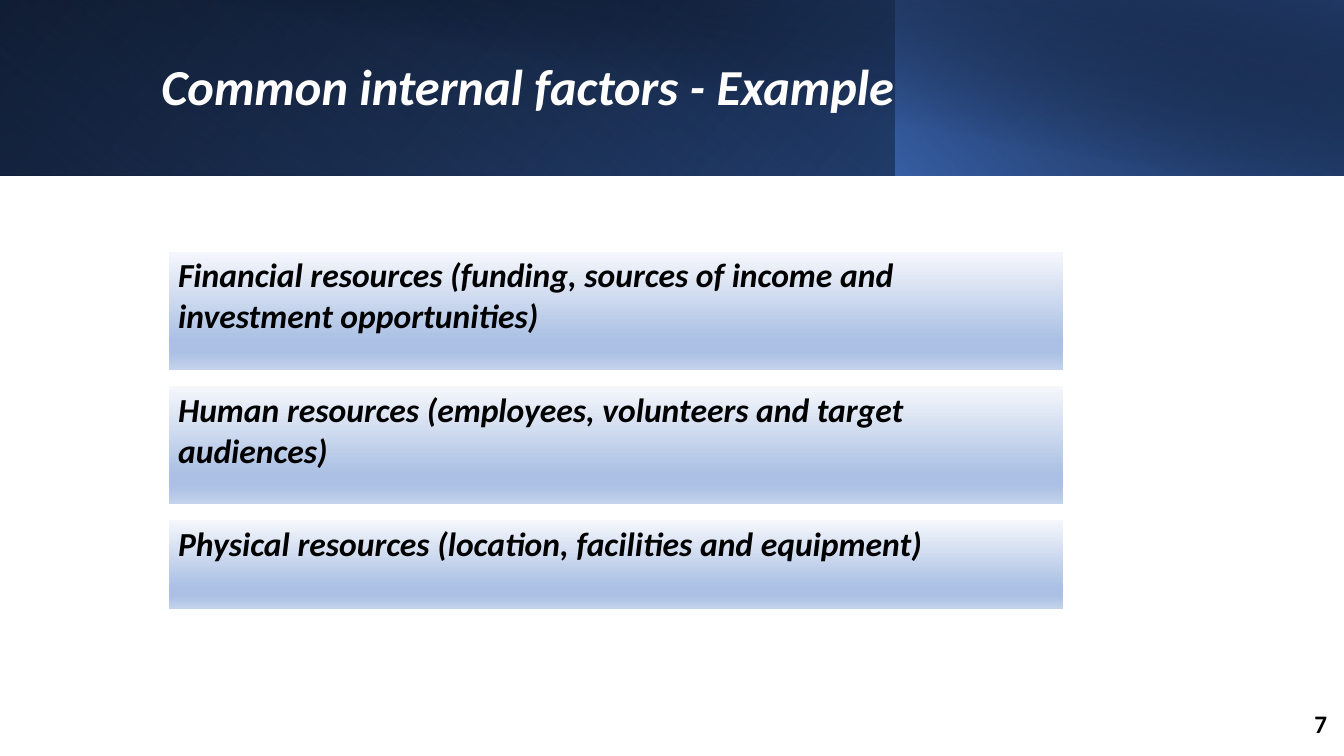
from lxml import etree
from pptx import Presentation
from pptx.dml.color import RGBColor
from pptx.enum.shapes import MSO_SHAPE
from pptx.enum.text import MSO_ANCHOR, PP_ALIGN
from pptx.oxml.ns import nsdecls, qn
from pptx.util import Inches, Pt

RECTANGLE = MSO_SHAPE.RECTANGLE
MIDDLE = MSO_ANCHOR.MIDDLE
LEFT, RIGHT = PP_ALIGN.LEFT, PP_ALIGN.RIGHT

THEME = {
    "font": "Calibri",
    "title_size": 36, "body_size": 24, "number_size": 18,
    "white": "FFFFFF", "black": "000000",
    "blue": "4472C4", "mid_blue": "2F5597", "navy": "203864",
    "row_stops": [(0, "F6F8FC", 100), (74, "ABC0E4", 100),
                  (83, "ABC0E4", 100), (100, "C7D5ED", 100)],
}


def write_text(frame, text, size, color="black", italic=True, align=LEFT):
    paragraph = frame.paragraphs[0]
    paragraph.alignment = align
    run = paragraph.add_run()
    run.text = text
    run.font.name = THEME["font"]
    run.font.size = Pt(THEME[size])
    run.font.bold = True
    run.font.italic = italic
    run.font.color.rgb = RGBColor.from_string(THEME[color])
    return paragraph


def fill_gradient(fill, properties, stops, angle):
    fill.background()
    stop_xml = "".join(
        f'<a:gs pos="{position * 1000}"><a:srgbClr val="{color}">'
        f'<a:alpha val="{opacity * 1000}"/></a:srgbClr></a:gs>'
        for position, color, opacity in stops)
    gradient = etree.fromstring(
        f'<a:gradFill {nsdecls("a")} rotWithShape="1"><a:gsLst>{stop_xml}</a:gsLst>'
        f'<a:lin ang="{angle * 60000}" scaled="0"/></a:gradFill>')
    properties.replace(properties.find(qn("a:noFill")), gradient)


presentation = Presentation()
presentation.slide_width = Inches(13.33)
presentation.slide_height = Inches(7.5)
width, height = presentation.slide_width, presentation.slide_height
slide = presentation.slides.add_slide(presentation.slide_layouts[5])
band_height = Inches(1.74)
two_thirds = width * 2 // 3

header_layers = [
    (0, width, 0, True, 140,
     [(0, THEME["black"], 100), (100, THEME["mid_blue"], 100)]),
    (0, two_thirds, 180, True, 230,
     [(20, THEME["blue"], 0), (100, THEME["navy"], 55)]),
    (two_thirds, width - two_thirds, 0, True, 220,
     [(0, THEME["blue"], 66), (100, THEME["black"], 30)]),
    (Inches(0.5), width - Inches(0.5), 0, False, 280,
     [(50, THEME["black"], 0), (99, THEME["navy"], 52)]),
]
for left, layer_width, rotation, flipped, angle, stops in header_layers:
    layer = slide.shapes.add_shape(RECTANGLE, left, 0, layer_width, band_height)
    layer.shadow.inherit = False
    layer.line.fill.background()
    layer.rotation = rotation
    properties = layer.element.spPr
    if flipped:
        properties.find(qn("a:xfrm")).set("flipH", "1")
    fill_gradient(layer.fill, properties, stops, angle)

title = slide.shapes.title
title.left, title.top = Inches(1.5), Inches(0.32)
title.width, title.height = Inches(10.82), Inches(1.13)
title.text_frame.vertical_anchor = MIDDLE
title.text_frame.word_wrap = True
write_text(title.text_frame, "Common internal factors - Example",
           "title_size", color="white").line_spacing = 0.9
slide.shapes._spTree.append(title.element)

number_box = slide.shapes.add_textbox(Inches(12.58), Inches(6.87), Inches(0.68), Inches(0.61))
number_box.text_frame.word_wrap = True
number_box.text_frame.vertical_anchor = MIDDLE
write_text(number_box.text_frame, "7", "number_size",
           italic=False, align=RIGHT).space_after = Pt(6)

factors = [
    ("Financial resources (funding, sources of income and investment opportunities)", 1.2),
    ("Human resources (employees, volunteers and target audiences)", 1.2),
    ("Physical resources (location, facilities and equipment)", 0.91),
]
borders = [("lnL", 1), ("lnR", 1), ("lnT", 1), ("lnB", 3)]
top, gap = Inches(2.49), Inches(0.13)
for text, row_height in factors:
    table = slide.shapes.add_table(
        1, 1, width // 8, top, two_thirds, Inches(row_height)).table
    table.first_row = False
    table.horz_banding = False
    cell = table.cell(0, 0)
    write_text(cell.text_frame, text, "body_size")
    cell_properties = cell._tc.get_or_add_tcPr()
    fill_gradient(cell.fill, cell_properties, THEME["row_stops"], 90)
    for index, (side, points) in enumerate(borders):
        cell_properties.insert(index, etree.fromstring(
            f'<a:{side} {nsdecls("a")} w="{Pt(points)}"><a:solidFill>'
            f'<a:srgbClr val="{THEME["white"]}"/></a:solidFill></a:{side}>'))
    top += Inches(row_height) + gap

presentation.save("out.pptx")
